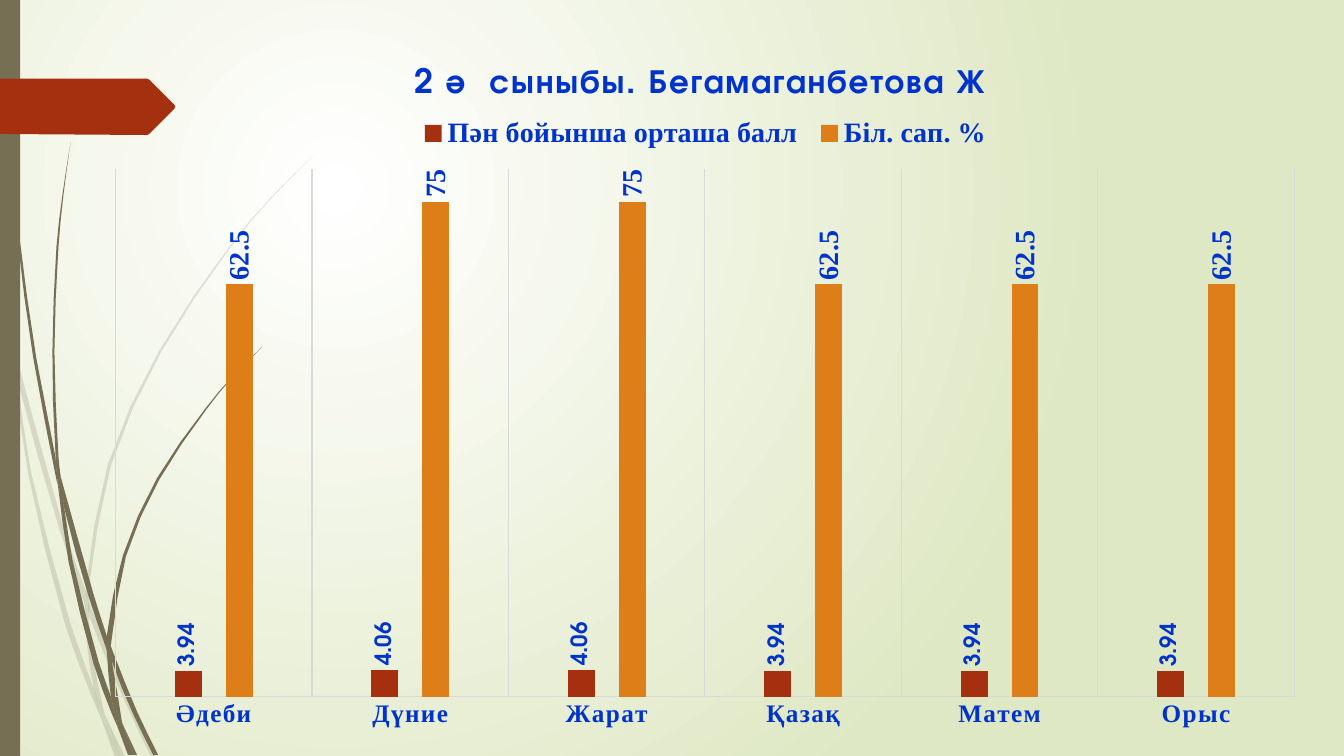
from lxml.etree import SubElement
from pptx import Presentation
from pptx.chart.data import CategoryChartData
from pptx.dml.color import RGBColor
from pptx.enum.chart import XL_CHART_TYPE as ChartType
from pptx.enum.chart import XL_LABEL_POSITION as LabelPosition
from pptx.enum.chart import XL_LEGEND_POSITION as LegendPosition
from pptx.enum.chart import XL_TICK_MARK as TickMark
from pptx.enum.shapes import MSO_SHAPE as Preset
from pptx.oxml.ns import qn
from pptx.util import Pt

WHITE = RGBColor(0xFF, 0xFF, 0xFF)
PALE_GREEN = RGBColor(0xDF, 0xE8, 0xC4)
OLIVE = RGBColor(0x76, 0x6F, 0x54)
RED = RGBColor(0xA5, 0x30, 0x10)
ORANGE = RGBColor(0xDE, 0x7E, 0x18)
BLUE = RGBColor(0x00, 0x33, 0xCC)
GREY = RGBColor(0xD9, 0xD9, 0xD9)
SANS = "TeX Gyre Adventor"
SERIF = "Times New Roman"
GRID = 0.72

SUBJECTS = ["Әдеби", "Дүние", "Жарат", "Қазақ", "Матем", "Орыс"]
SERIES = [
    ("Пән бойынша орташа балл", [3.94, 4.06, 4.06, 3.94, 3.94, 3.94], RED, 16, SANS),
    ("Біл. сап. %", [62.5, 75, 75, 62.5, 62.5, 62.5], ORANGE, 20, SERIF),
]

PALE_BLADES = [
    ([(0, 282), (9, 322), (11, 350)], [(0, 299), (10, 344), (11, 350)]),
    ([(14, 345), (62, 520), (85, 586)], [(14, 345), (17, 376), (58, 522), (84, 599)]),
    ([(88, 596), (92, 607), (127, 692), (155, 751)],
     [(88, 596), (88, 610), (123, 694), (150, 751)]),
    ([(105, 711), (124, 751)], [(105, 711), (119, 751)]),
    ([(11, 350), (17, 376), (31, 469), (70, 619), (93, 683), (99, 707), (101, 714)],
     [(11, 350), (28, 470), (65, 621), (92, 693), (101, 714)]),
    ([(84, 599), (88, 610), (91, 646), (103, 706), (105, 711)],
     [(84, 599), (87, 646), (93, 683), (96, 692), (105, 711)]),
    ([(312, 153), (268, 197), (228, 244), (158, 348), (107, 461), (85, 584), (88, 596)],
     [(312, 154), (268, 198), (229, 245), (160, 349), (110, 462), (88, 584), (88, 596)]),
    ([(101, 714), (119, 751)], [(101, 714), (114, 751)]),
    ([(85, 586), (88, 596), (88, 610)], [(85, 586), (84, 599), (88, 608)]),
    ([(93, 683), (96, 692), (105, 711), (119, 751)],
     [(93, 683), (99, 707), (101, 714), (119, 751)]),
]
DARK_BLADES = [
    ([(3, 0), (4, 48), (7, 110), (17, 233), (33, 355), (57, 481)],
     [(4, 0), (5, 48), (8, 109), (19, 232), (36, 355), (55, 453), (57, 481)]),
    ([(60, 472), (93, 590), (106, 631)], [(60, 472), (64, 505), (88, 592), (106, 645)]),
    ([(110, 641), (113, 649), (136, 706), (157, 749)],
     [(110, 641), (111, 656), (132, 708), (152, 749)]),
    ([(57, 477), (64, 505), (72, 556), (98, 657), (110, 691), (117, 722)],
     [(57, 477), (68, 557), (93, 659), (111, 708), (117, 722)]),
    ([(70, 141), (62, 193), (56, 245), (52, 349), (55, 449), (60, 472)],
     [(70, 141), (63, 193), (58, 245), (54, 349), (58, 453), (60, 472)]),
    ([(122, 719), (136, 749)], [(122, 719), (133, 749)]),
    ([(55, 449), (60, 472), (64, 505)], [(55, 449), (57, 477), (64, 505)]),
    ([(260, 344), (231, 373), (204, 405), (156, 474), (122, 551), (106, 631), (110, 641)],
     [(261, 344), (231, 374), (205, 406), (158, 476), (125, 552), (111, 633), (110, 641)]),
    ([(117, 722), (131, 749)], [(117, 722), (127, 749)]),
    ([(106, 645), (111, 656), (121, 716), (122, 719)],
     [(106, 645), (110, 691), (116, 706), (122, 719)]),
    ([(106, 631), (110, 641), (111, 656)], [(106, 631), (106, 645), (111, 656)]),
    ([(110, 691), (116, 706), (122, 719), (133, 749)],
     [(110, 691), (116, 717), (117, 722), (130, 749)]),
]
RIBBON = [(0, 78), (146, 78), (148, 79), (173, 104), (174, 106),
          (173, 108), (148, 133), (146, 134), (0, 133)]


def smooth(points):
    """Return the points with one more between each two, on a curve through them."""
    knots = [complex(*point) for point in points]
    last = len(knots) - 1
    if last == 1:
        return points
    chords = [knots[min(i + 1, last)] - knots[max(i - 1, 0)] for i in range(last + 1)]
    tangents = [chord / abs(chord) for chord in chords]
    curve = [knots[0]]
    for i in range(last):
        start, end = knots[i], knots[i + 1]
        bend = (tangents[i] - tangents[i + 1]) * abs(end - start) / 8
        curve += [(start + end) / 2 + bend, end]
    return [(knot.real, knot.imag) for knot in curve]


def paint(shape, color, opacity=100):
    """Fill a shape with one colour, without line or shadow."""
    shape.shadow.inherit = False
    shape.fill.solid()
    shape.fill.fore_color.rgb = color
    shape.line.fill.background()
    if opacity < 100:
        for node in shape.element.xpath("./p:spPr/a:solidFill/a:srgbClr"):
            SubElement(node, qn("a:alpha"), val=str(opacity * 1000))


def add_outline(shapes, points, color, opacity=100):
    """Draw a closed outline given in grid units."""
    corners = [(Pt(x * GRID), Pt(y * GRID)) for x, y in points]
    builder = shapes.build_freeform(*corners[0])
    builder.add_line_segments(corners[1:], close=True)
    paint(builder.convert_to_shape(), color, opacity)


def add_blades(slide, blades, opacity):
    """Draw a group of grass blades, each bounded by two curves."""
    group = slide.shapes.add_group_shape()
    for one_side, other_side in blades:
        outline = smooth(one_side) + smooth(other_side)[:0:-1]
        add_outline(group.shapes, outline, OLIVE, opacity)


def set_background(slide):
    """Give the slide a round gradient."""
    fill = slide.background.fill
    fill.gradient()
    for stop, color in zip(fill.gradient_stops, (WHITE, PALE_GREEN)):
        stop.color.rgb = color
    linear = slide.element.find(".//" + qn("a:lin"))
    gradient = linear.getparent()
    gradient.remove(linear)
    circle = SubElement(gradient, qn("a:path"), path="circle")
    SubElement(circle, qn("a:fillToRect"), l="50000", t="50000", r="100000", b="100000")


def set_font(font, size, name):
    """Set a bold blue font."""
    font.size, font.name, font.bold = Pt(size), name, True
    font.color.rgb = BLUE


def set_layout(parent, index, inner=False, **percents):
    """Place a chart part by percentages of the chart's size."""
    for old in parent.findall(qn("c:layout")):
        parent.remove(old)
    layout = SubElement(parent, qn("c:layout"))
    parent.insert(index, layout)
    manual = SubElement(layout, qn("c:manualLayout"))
    if inner:
        SubElement(manual, qn("c:layoutTarget"), val="inner")
    for mode in ("xMode", "yMode"):
        SubElement(manual, qn("c:" + mode), val="edge")
    for side, percent in percents.items():
        SubElement(manual, qn("c:" + side), val=str(percent / 100))


def add_scores_chart(slide):
    """Add the column chart of scores by subject."""
    data = CategoryChartData()
    data.categories = SUBJECTS
    for name, values, *_ in SERIES:
        data.add_series(name, values)
    chart = slide.shapes.add_chart(
        ChartType.COLUMN_CLUSTERED, Pt(65), Pt(31), Pt(878), Pt(498), data).chart
    chart.font.size, chart.font.name = Pt(10), SANS

    run = chart.chart_title.text_frame.paragraphs[0].add_run()
    run.text = "2 ә  сыныбы. Бегамаганбетова Ж"
    set_font(run.font, 24, SANS)
    chart.has_legend = True
    chart.legend.position = LegendPosition.TOP
    chart.legend.include_in_layout = False
    set_font(chart.legend.font, 20, SERIF)

    subject_axis, score_axis = chart.category_axis, chart.value_axis
    subject_axis.major_tick_mark = TickMark.NONE
    set_font(subject_axis.tick_labels.font, 18, SERIF)
    for part in (subject_axis, subject_axis.major_gridlines):
        part.format.line.color.rgb = GREY
        part.format.line.width = Pt(0.75)
    score_axis.has_major_gridlines = False
    score_axis.visible = False
    score_axis.minimum_scale, score_axis.maximum_scale = 0, 80

    plot = chart.plots[0]
    plot.gap_width, plot.overlap, plot.vary_by_categories = 444, -90, False
    for series, (_, _, color, size, font_name) in zip(plot.series, SERIES):
        series.format.fill.solid()
        series.format.fill.fore_color.rgb = color
        labels = series.data_labels
        labels.show_value = True
        labels.position = LabelPosition.OUTSIDE_END
        set_font(labels.font, size, font_name)

    root = chart.element
    for body in root.xpath(".//c:dLbls/c:txPr/a:bodyPr"):
        body.set("rot", "-5400000")
        body.set("vert", "horz")
    for font in root.xpath(".//c:title//a:rPr | .//c:catAx//a:defRPr"):
        font.set("spc", "120" if font.tag == qn("a:rPr") else "100")
    set_layout(root.find(".//" + qn("c:title")), 1, x=25.8, y=2.1)
    set_layout(root.find(".//" + qn("c:legend")), 1, x=26, y=9.9, w=48, h=6)
    set_layout(root.find(".//" + qn("c:plotArea")), 0, True, x=2, y=18, w=95.9, h=75.7)


def main():
    """Build and save the slide."""
    presentation = Presentation()
    presentation.slide_width, presentation.slide_height = Pt(960), Pt(540)
    slide = presentation.slides.add_slide(presentation.slide_layouts[6])
    set_background(slide)
    add_blades(slide, PALE_BLADES, 20)
    add_blades(slide, DARK_BLADES, 100)
    edge = slide.shapes.add_shape(Preset.RECTANGLE, 0, 0, Pt(14.4), Pt(540))
    paint(edge, OLIVE)
    add_outline(slide.shapes, RIBBON, RED)
    add_scores_chart(slide)
    presentation.save("out.pptx")


if __name__ == "__main__":
    main()
